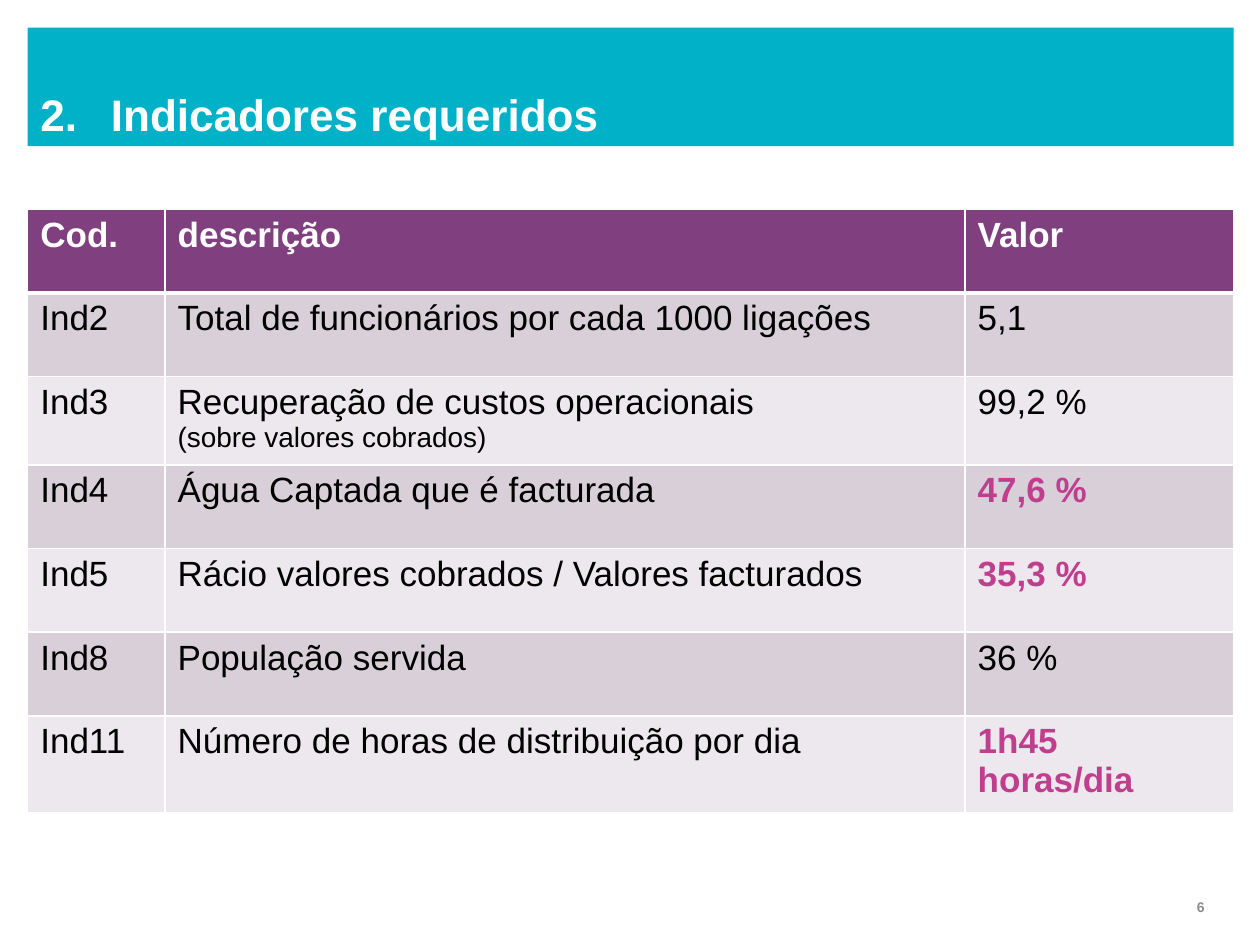
"""Build the slide of required indicators: title band, value table and page number."""
import pptx
import pptx.dml.color
import pptx.enum.text
import pptx.oxml
import pptx.oxml.ns
import pptx.util

Inches, Pt = pptx.util.Inches, pptx.util.Pt
ALIGN, ANCHOR = pptx.enum.text.PP_ALIGN, pptx.enum.text.MSO_ANCHOR

HEADING = "Indicadores requeridos"
PAGE = "6"
HEADER = ("Cod.", "descrição", "Valor")
INDICATORS = [
    ("Ind2", "Total de funcionários por cada 1000 ligações", "5,1"),
    ("Ind3", "Recuperação de custos operacionais\n(sobre valores cobrados)", "99,2 %"),
    ("Ind4", "Água Captada que é facturada", "47,6 %"),
    ("Ind5", "Rácio valores cobrados / Valores facturados", "35,3 %"),
    ("Ind8", "População servida", "36 %"),
    ("Ind11", "Número de horas de distribuição por dia", "1h45 horas/dia"),
]
HIGHLIGHTED = {"47,6 %", "35,3 %", "1h45 horas/dia"}

COLORS = {"band": "00B1C7", "header": "804080", "odd": "D8CFD8", "even": "EDE8ED",
          "white": "FFFFFF", "text": "000000", "accent": "C03E8E", "page": "8C8C8C"}
FORMATS = {
    "heading": {"size": Pt(25.2), "bold": True, "color": "white"},
    "header": {"size": Pt(20), "bold": True, "color": "white"},
    "body": {"size": Pt(20), "bold": False, "color": "text"},
    "detail": {"size": Pt(16), "bold": False, "color": "text"},
    "accent": {"size": Pt(20), "bold": True, "color": "accent"},
    "page": {"size": Pt(8), "bold": True, "color": "page"},
}
LEFT, WIDTH = 0.22, 9.57
COLUMNS = (1.09, 6.35, 2.13)
TABLE_TOP, TABLE_HEIGHT = 1.66, 4.65


def rgb(color):
    return pptx.dml.color.RGBColor.from_string(COLORS[color])


def paint(target, color):
    target.fill.solid()
    target.fill.fore_color.rgb = rgb(color)


def write(paragraph, text, style, alignment=ALIGN.LEFT):
    paragraph.alignment = alignment
    run = paragraph.add_run()
    run.text = text
    run.font.name = "Arial"
    for attribute, value in FORMATS[style].items():
        if attribute == "color":
            run.font.color.rgb = rgb(value)
        else:
            setattr(run.font, attribute, value)


def add_borders(cell, widths):
    properties = cell._tc.get_or_add_tcPr()
    for side, width in zip("LRTB", widths):
        properties.append(pptx.oxml.parse_xml(
            f'<a:ln{side} {pptx.oxml.ns.nsdecls("a")} w="{Pt(width)}"><a:solidFill>'
            f'<a:srgbClr val="{COLORS["white"]}"/></a:solidFill></a:ln{side}>'))


def add_heading(slide):
    heading = slide.shapes.title
    bounds = {"left": LEFT, "top": 0.22, "width": WIDTH, "height": 0.94}
    for attribute, value in bounds.items():
        setattr(heading, attribute, Inches(value))
    paint(heading, "band")
    frame = heading.text_frame
    frame.auto_size = pptx.enum.text.MSO_AUTO_SIZE.NONE
    frame.vertical_anchor = ANCHOR.MIDDLE
    paragraph = frame.paragraphs[0]
    properties = paragraph._p.get_or_add_pPr()
    properties.set("marL", str(Inches(0.56)))
    properties.set("indent", str(-Inches(0.56)))
    properties.append(pptx.oxml.parse_xml(
        f'<a:buFont {pptx.oxml.ns.nsdecls("a")} typeface="+mj-lt"/>'))
    properties.append(pptx.oxml.parse_xml(
        f'<a:buAutoNum {pptx.oxml.ns.nsdecls("a")} type="arabicPeriod" startAt="2"/>'))
    paragraph.line_spacing = 2.0
    write(paragraph, HEADING, "heading")


def add_indicators(slide):
    rows = [HEADER, *INDICATORS]
    table = slide.shapes.add_table(
        len(rows), len(COLUMNS), Inches(LEFT), Inches(TABLE_TOP),
        Inches(WIDTH), Inches(TABLE_HEIGHT)).table
    for column, width in zip(table.columns, COLUMNS):
        column.width = Inches(width)
    for index, values in enumerate(rows):
        fill = "header" if index == 0 else ("even", "odd")[index % 2]
        widths = (1, 1, 3 if index == 1 else 1, 3 if index == 0 else 1)
        for cell, value in zip(table.rows[index].cells, values):
            add_borders(cell, widths)
            paint(cell, fill)
            style = "header" if index == 0 else "accent" if value in HIGHLIGHTED else "body"
            main, *details = value.split("\n")
            write(cell.text_frame.paragraphs[0], main, style)
            for detail in details:
                write(cell.text_frame.add_paragraph(), detail, "detail")


def add_page_number(slide):
    frame = slide.shapes.add_textbox(
        Inches(7.33), Inches(7), Inches(2.33), Inches(0.4)).text_frame
    frame.word_wrap = True
    frame.vertical_anchor = ANCHOR.MIDDLE
    write(frame.paragraphs[0], PAGE, "page", ALIGN.RIGHT)


def main():
    deck = pptx.Presentation()
    deck.slide_width, deck.slide_height = Inches(10), Inches(7.5)
    slide = deck.slides.add_slide(deck.slide_layouts.get_by_name("Title Only"))
    add_heading(slide)
    add_page_number(slide)
    add_indicators(slide)
    deck.save("out.pptx")


if __name__ == "__main__":
    main()
